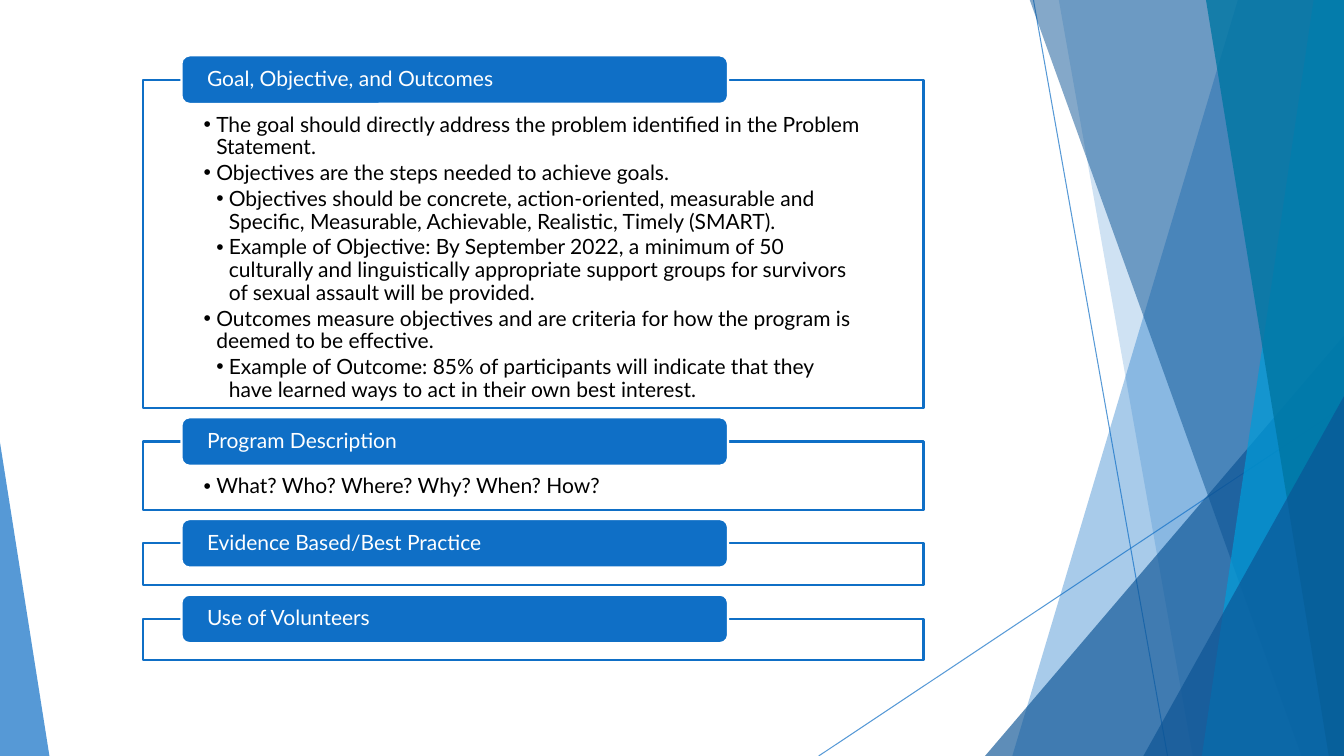
"""Build a slide on the sections of a program proposal."""
from dataclasses import dataclass

from lxml.etree import SubElement
from pptx import Presentation
from pptx.dml.color import RGBColor
from pptx.enum.shapes import MSO_CONNECTOR, MSO_SHAPE
from pptx.enum.text import MSO_ANCHOR, MSO_AUTO_SIZE, PP_ALIGN
from pptx.oxml.ns import qn
from pptx.util import Inches, Pt


@dataclass(frozen=True)
class Theme:
    blue: RGBColor = RGBColor(0x0F, 0x6F, 0xC6)
    navy: RGBColor = RGBColor(0x0B, 0x53, 0x94)
    cyan: RGBColor = RGBColor(0x00, 0x9D, 0xD9)
    teal: RGBColor = RGBColor(0x00, 0x76, 0xA3)
    white: RGBColor = RGBColor(0xFF, 0xFF, 0xFF)
    black: RGBColor = RGBColor(0x00, 0x00, 0x00)
    font: str = "Lato"
    text_size: Pt = Pt(15)
    outline: Pt = Pt(1.5)
    hairline: Pt = Pt(0.75)


def paint(fill, color, shape, opacity):
    fill.solid()
    fill.fore_color.rgb = color
    color_node = next(shape._element.spPr.iter(qn("a:srgbClr")))
    SubElement(color_node, qn("a:alpha")).set("val", str(opacity * 1000))


def style_text(paragraph, color, space_after):
    paragraph.alignment = PP_ALIGN.LEFT
    paragraph.line_spacing = 0.9
    paragraph.space_before = Pt(0)
    paragraph.space_after = space_after
    paragraph.font.name = theme.font
    paragraph.font.size = theme.text_size
    paragraph.font.color.rgb = color


theme = Theme()
WIDTH, HEIGHT = 13.33, 7.5
presentation = Presentation()
presentation.slide_width = Inches(WIDTH)
presentation.slide_height = Inches(HEIGHT)
slide = presentation.slides.add_slide(presentation.slide_layouts.get_by_name("Two Content"))
title, *list_boxes = slide.placeholders
title._element.getparent().remove(title._element)

for start_x, start_y, end_x in [(10.25, 0, 11.58), (WIDTH, 4.03, 8.12)]:
    connector = slide.shapes.add_connector(
        MSO_CONNECTOR.STRAIGHT, Inches(start_x), Inches(start_y), Inches(end_x), Inches(HEIGHT))
    paint(connector.line.fill, theme.blue, connector, 70)
    connector.line.width = theme.hairline
    SubElement(connector._element.spPr, qn("a:effectLst"))

# Bands: top x, bottom x. Triangles: left, top, width, apex.
facets = [
    ("band", (12.28, 10.04), theme.blue, 36),
    ("band", (10.5, 11.83), theme.blue, 20),
    ("triangle", (9.77, 3.33, 3.56, 1), theme.navy, 66),
    ("band", (10.21, 12.91), theme.navy, 50),
    ("band", (13.03, 11.92), theme.cyan, 70),
    ("band", (11.96, 13.18), theme.teal, 80),
    ("triangle", (11.34, 3.93, 1.99, 1), theme.navy, 66),
    ("triangle", (0, 4.39, 0.49, 0), theme.blue, 70),
]
for kind, measures, color, opacity in facets:
    if kind == "band":
        top_x, bottom_x = measures
        corners = [(WIDTH, -0.01), (WIDTH, HEIGHT), (bottom_x, HEIGHT)]
        builder = slide.shapes.build_freeform(Inches(top_x), Inches(-0.01))
        builder.add_line_segments([(Inches(x), Inches(y)) for x, y in corners])
        facet = builder.convert_to_shape()
    else:
        left, top, width, apex = measures
        facet = slide.shapes.add_shape(
            MSO_SHAPE.ISOSCELES_TRIANGLE,
            Inches(left), Inches(top), Inches(width), Inches(HEIGHT - top))
        facet.adjustments[0] = apex
    paint(facet.fill, color, facet, opacity)
    facet.line.fill.background()
    facet.shadow.inherit = False

sections = [
    ("Goal, Objective, and Outcomes", 0.79, 3.26, [
        (0, "The goal should directly address the problem identified in the Problem Statement."),
        (0, "Objectives are the steps needed to achieve goals."),
        (1, "Objectives should be concrete, action-oriented, measurable and Specific, "
            "Measurable, Achievable, Realistic, Timely (SMART)."),
        (1, "Example of Objective: By September 2022, a minimum of 50 culturally and "
            "linguistically appropriate support groups for survivors of sexual assault "
            "will be provided."),
        (0, "Outcomes measure objectives and are criteria for how the program is deemed "
            "to be effective."),
        (1, "Example of Outcome: 85% of participants will indicate that they have learned "
            "ways to act in their own best interest."),
    ]),
    ("Program Description", 4.38, 0.68, [(0, "What? Who? Where? Why? When? How?")]),
    ("Evidence Based/Best Practice", 5.39, 0.41, []),
    ("Use of Volunteers", 6.14, 0.41, []),
]
for heading, top, height, points in sections:
    if points:
        box = list_boxes.pop(0)
    else:
        box = slide.shapes.add_shape(MSO_SHAPE.RECTANGLE, 0, 0, 0, 0)
        box.shadow.inherit = False
    box.left, box.top = Inches(1.42), Inches(top)
    box.width, box.height = Inches(7.74), Inches(height)
    paint(box.fill, theme.white, box, 90)
    box.line.color.rgb = theme.blue
    box.line.width = theme.outline

    frame = box.text_frame
    if points:
        frame.auto_size = MSO_AUTO_SIZE.NONE
        frame.word_wrap = True
        frame.vertical_anchor = MSO_ANCHOR.TOP
        frame.margin_left = frame.margin_right = Inches(0.6)
        frame.margin_top, frame.margin_bottom = Inches(0.34), Inches(0.12)
    for index, (level, text) in enumerate(points):
        paragraph = frame.add_paragraph() if index else frame.paragraphs[0]
        paragraph.text = text
        paragraph.level = level
        style_text(paragraph, theme.black, Pt(2.25))
        properties = paragraph._p.get_or_add_pPr()
        properties.set("marL", str(Inches(0.125 * (level + 1))))
        properties.set("indent", str(Inches(-0.125)))
        SubElement(properties, qn("a:buChar")).set("char", "•")

    label = slide.shapes.add_shape(
        MSO_SHAPE.ROUNDED_RECTANGLE, Inches(1.8), Inches(top - 0.24), Inches(5.42), Inches(0.48))
    label.shadow.inherit = False
    label.fill.solid()
    label.fill.fore_color.rgb = theme.blue
    label.line.color.rgb = theme.white
    label.line.width = theme.outline
    frame = label.text_frame
    frame.word_wrap = True
    frame.vertical_anchor = MSO_ANCHOR.MIDDLE
    frame.margin_left = frame.margin_right = Inches(0.23)
    frame.margin_top = frame.margin_bottom = 0
    frame.text = heading
    style_text(frame.paragraphs[0], theme.white, Pt(5.25))

presentation.save("out.pptx")
